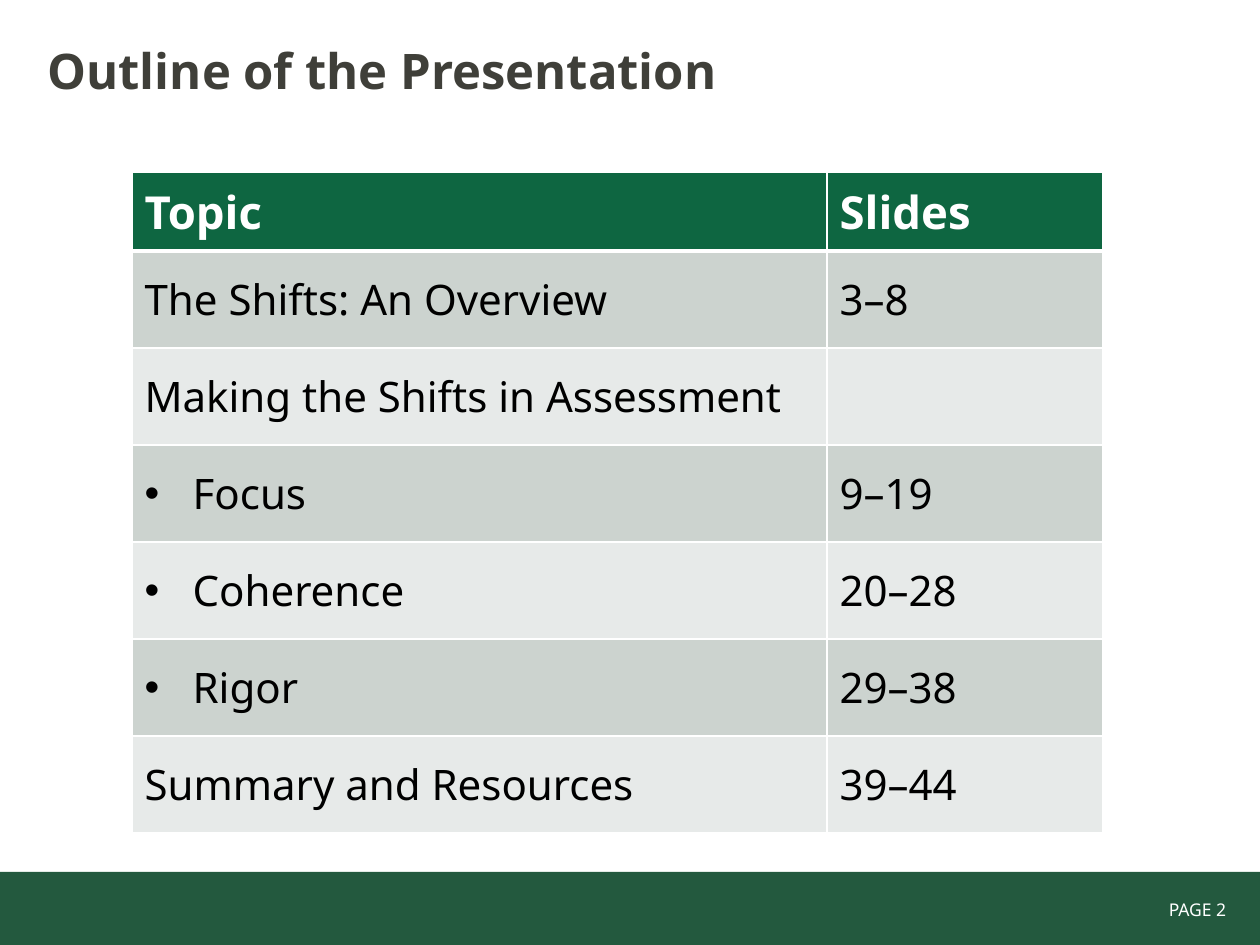
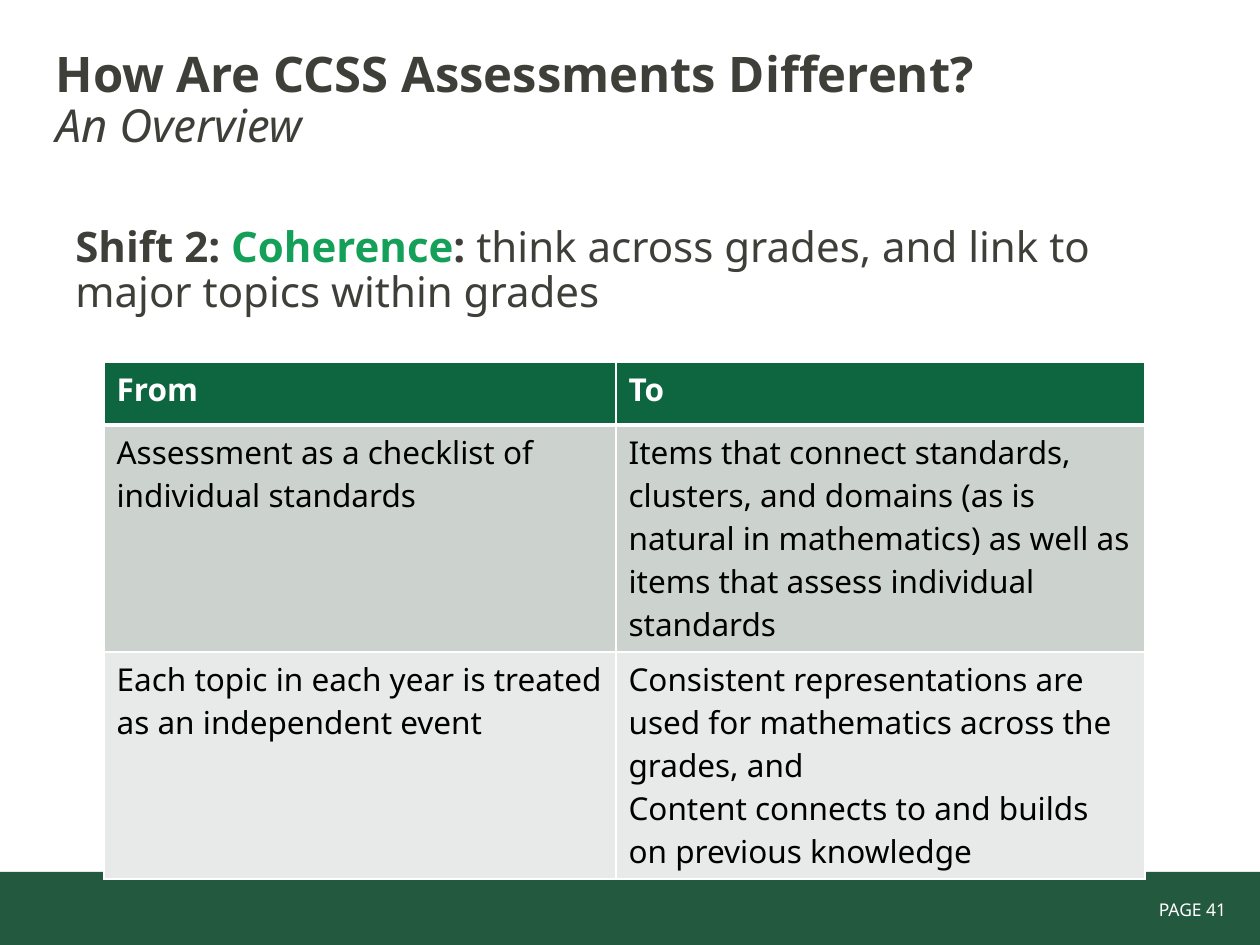
"""Builds the outline slide and the coherence comparison slide."""
from dataclasses import dataclass

import lxml.etree
import pptx
import pptx.dml.color
import pptx.enum.shapes
import pptx.enum.text
import pptx.oxml.ns
import pptx.util

ALIGN = pptx.enum.text.PP_ALIGN
ANCHOR = pptx.enum.text.MSO_ANCHOR
FONT = "Noto Sans"
WHITE, BLACK, INK = "FFFFFF", "000000", "3F3F39"
BAND, HEADER, ACCENT = "23593E", "0E6641", "15A059"
STRIPES = ("CCD3CF", "E7EAE9")
PX_PER_INCH = 126
BULLET_INDENT = 48


@dataclass(frozen=True)
class Box:
    """A rectangle in px."""
    left: int
    top: int
    width: int
    height: int


@dataclass(frozen=True)
class Span:
    """A stretch of text with one format."""
    text: str
    size: int
    color: str = INK
    bold: bool = False
    italic: bool = False


@dataclass(frozen=True)
class Row:
    """A table row, optionally with a bulleted first cell."""
    cells: tuple[str, ...]
    height: int
    bulleted: bool = False


@dataclass(frozen=True)
class Grid:
    """A table whose first row is its header."""
    left: int
    top: int
    columns: tuple[int, ...]
    rows: tuple[Row, ...]
    header_size: int
    body_size: int
    anchor: ANCHOR


def px(length: int) -> int:
    """Turn px into EMU."""
    return round(length * pptx.util.Inches(1) / PX_PER_INCH)


def place(box: Box) -> tuple[int, ...]:
    """Give a box as EMU left, top, width and height."""
    return tuple(px(n) for n in (box.left, box.top, box.width, box.height))


def rgb(value: str) -> pptx.dml.color.RGBColor:
    """Turn a hex string into a colour."""
    return pptx.dml.color.RGBColor.from_string(value)


def apply(target, values: dict) -> None:
    """Set each named attribute on the target."""
    for name, value in values.items():
        setattr(target, name, value)


def write(paragraph, *spans: Span) -> None:
    """Add formatted spans to a paragraph."""
    for span in spans:
        run = paragraph.add_run()
        run.text = span.text
        apply(run.font, {"name": FONT, "size": pptx.util.Pt(span.size),
                         "bold": span.bold, "italic": span.italic})
        run.font.color.rgb = rgb(span.color)


def add_text(slide, box: Box, *spans: Span, **paragraph_format):
    """Add a wrapped text box with one paragraph."""
    frame = slide.shapes.add_textbox(*place(box)).text_frame
    frame.word_wrap = True
    apply(frame.paragraphs[0], paragraph_format)
    write(frame.paragraphs[0], *spans)


def add_page(deck, page: int, title_box: Box, *title_lines: Span):
    """Add a slide with its title, footer band and page number."""
    slide = deck.slides.add_slide(deck.slide_layouts[5])
    title = slide.shapes.title
    apply(title, dict(zip(("left", "top", "width", "height"), place(title_box))))
    apply(title.text_frame, {"vertical_anchor": ANCHOR.MIDDLE, "word_wrap": True,
                             "auto_size": pptx.enum.text.MSO_AUTO_SIZE.NONE})
    heading = title.text_frame.paragraphs[0]
    apply(heading, {"alignment": ALIGN.LEFT, "line_spacing": 0.9})
    for index, line in enumerate(title_lines):
        if index:
            heading.add_line_break()
        write(heading, line)

    band = slide.shapes.add_shape(
        pptx.enum.shapes.MSO_SHAPE.RECTANGLE, *place(Box(0, 872, 1261, 74)))
    band.shadow.inherit = False
    band.fill.solid()
    band.fill.fore_color.rgb = rgb(BAND)
    band.line.fill.background()
    add_text(slide, Box(1043, 893, 200, 34), Span(f"PAGE {page} ", 10, WHITE),
             alignment=ALIGN.RIGHT)
    return slide


def add_xml(parent, tag: str, **attributes: str):
    """Append a DrawingML element."""
    return lxml.etree.SubElement(parent, pptx.oxml.ns.qn(f"a:{tag}"), attributes)


def border(cell, is_header: bool, below_header: bool) -> None:
    """Draw white cell borders, heavier under the header."""
    properties = cell._tc.get_or_add_tcPr()
    for side in ("lnL", "lnR", "lnT", "lnB"):
        heavy = (is_header and side == "lnB") or (below_header and side == "lnT")
        line = add_xml(properties, side, w=str(pptx.util.Pt(3 if heavy else 1)))
        add_xml(add_xml(line, "solidFill"), "srgbClr", val=WHITE)


def bullet(paragraph) -> None:
    """Give a paragraph a hanging round bullet."""
    properties = paragraph._p.get_or_add_pPr()
    properties.set("marL", str(px(BULLET_INDENT)))
    properties.set("indent", str(-px(BULLET_INDENT)))
    add_xml(properties, "buFont", typeface="Arial")
    add_xml(properties, "buChar", char="•")


def add_grid(slide, grid: Grid) -> None:
    """Add a table with a green header and striped rows."""
    box = Box(grid.left, grid.top, sum(grid.columns),
              sum(row.height for row in grid.rows))
    table = slide.shapes.add_table(
        len(grid.rows), len(grid.columns), *place(box)).table
    for column, width in zip(table.columns, grid.columns):
        column.width = px(width)
    for r, row in enumerate(grid.rows):
        table.rows[r].height = px(row.height)
        is_header = r == 0
        size = grid.header_size if is_header else grid.body_size
        for c, content in enumerate(row.cells):
            cell = table.cell(r, c)
            cell.vertical_anchor = grid.anchor
            border(cell, is_header, r == 1)
            cell.fill.solid()
            cell.fill.fore_color.rgb = rgb(HEADER if is_header else STRIPES[(r - 1) % 2])
            frame = cell.text_frame
            for index, text in enumerate(content.splitlines()):
                paragraph = frame.add_paragraph() if index else frame.paragraphs[0]
                if row.bulleted and c == 0:
                    bullet(paragraph)
                write(paragraph, Span(text, size, WHITE if is_header else BLACK,
                                      bold=is_header))


TOPICS = Grid(132, 172, (695, 276), (
    Row(("Topic", "Slides"), 79),
    Row(("The Shifts: An Overview", "3–8"), 97),
    Row(("Making the Shifts in Assessment", ""), 97),
    Row(("Focus", "9–19"), 97, True),
    Row(("Coherence", "20–28"), 97, True),
    Row(("Rigor", "29–38"), 97, True),
    Row(("Summary and Resources", "39–44"), 97),
), 26, 24, ANCHOR.MIDDLE)

CHANGES = Grid(104, 362, (512, 529), (
    Row(("From", "To"), 63),
    Row(("Assessment as a checklist of individual standards",
         "Items that connect standards, clusters, and domains (as is natural in "
         "mathematics) as well as items that assess individual standards"), 227),
    Row(("Each topic in each year is treated as an independent event",
         "Consistent representations are used for mathematics across the grades, and\n"
         "Content connects to and builds on previous knowledge"), 227),
), 18, 18, ANCHOR.TOP)


def main() -> None:
    """Build and save the deck."""
    deck = pptx.Presentation()
    apply(deck, {"slide_width": px(1260), "slide_height": px(945)})

    outline = add_page(deck, 2, Box(35, 8, 1134, 132),
                       Span("Outline of the Presentation", 28, bold=True))
    add_grid(outline, TOPICS)

    coherence = add_page(deck, 41, Box(43, 23, 1134, 157),
                         Span("How Are CCSS Assessments Different?", 28, bold=True),
                         Span("An Overview", 26, italic=True))
    add_text(coherence, Box(63, 220, 1134, 624),
             Span("Shift 2: ", 24, bold=True),
             Span("Coherence", 24, ACCENT, bold=True),
             Span(": ", 24, bold=True),
             Span("think across grades, and link to major topics within grades", 24),
             line_spacing=0.9, space_before=pptx.util.Pt(2))
    add_grid(coherence, CHANGES)
    deck.save("out.pptx")


if __name__ == "__main__":
    main()
